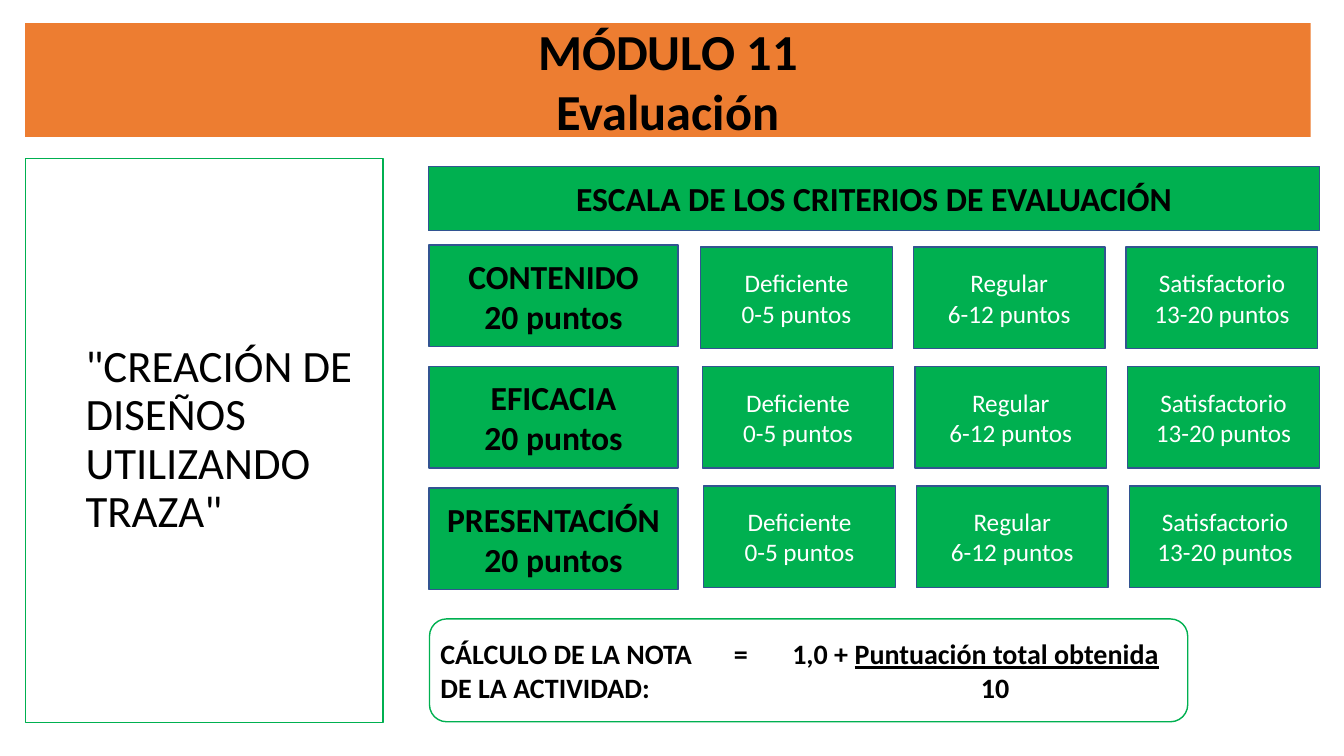
from dataclasses import dataclass

from pptx import Presentation
from pptx.dml.color import RGBColor
from pptx.enum.shapes import MSO_SHAPE
from pptx.enum.text import MSO_ANCHOR, PP_ALIGN
from pptx.util import Inches, Pt

RECTANGLE = MSO_SHAPE.RECTANGLE
ROUNDED = MSO_SHAPE.ROUNDED_RECTANGLE
CENTER, LEFT = PP_ALIGN.CENTER, PP_ALIGN.LEFT
MIDDLE = MSO_ANCHOR.MIDDLE


@dataclass(frozen=True)
class Theme:
    font: str = "Calibri"
    orange: str = "ED7D31"
    green: str = "00B050"
    blue: str = "325491"
    black: str = "000000"
    white: str = "FFFFFF"
    title: int = 36
    topic: int = 32
    heading: int = 24
    formula: int = 20
    score: int = 18


THEME = Theme()
CRITERIA = ["CONTENIDO", "EFICACIA", "PRESENTACIÓN"]
LEVELS = ["Deficiente\n0-5 puntos", "Regular\n6-12 puntos", "Satisfactorio\n13-20 puntos"]


def write(shape, text, size, color=THEME.black, bold=False, align=LEFT):
    frame = shape.text_frame
    frame.word_wrap = True
    frame.text = text
    for paragraph in frame.paragraphs:
        paragraph.alignment = align
        for run in paragraph.runs:
            font = run.font
            font.name, font.size, font.bold = THEME.font, Pt(size), bold
            font.color.rgb = RGBColor.from_string(color)
    return frame


def indent(paragraph, length):
    paragraph._p.get_or_add_pPr().set("marL", str(length))


def add_box(slide, left, top, width, height, fill=None, line=None, kind=RECTANGLE):
    shape = slide.shapes.add_shape(
        kind, Inches(left), Inches(top), Inches(width), Inches(height))
    shape.shadow.inherit = False
    shape.text_frame.vertical_anchor = MIDDLE
    if fill:
        shape.fill.solid()
        shape.fill.fore_color.rgb = RGBColor.from_string(fill)
    else:
        shape.fill.background()
    if line:
        shape.line.color.rgb = RGBColor.from_string(line)
        shape.line.width = Pt(1)
    else:
        shape.line.fill.background()
    return shape


def add_green_box(slide, left, top, width, height, text, size, color, bold):
    shape = add_box(slide, left, top, width, height, THEME.green, THEME.blue)
    write(shape, text, size, color, bold, CENTER)


def add_formula_text(slide, left, width, text):
    box = slide.shapes.add_textbox(
        Inches(left), Inches(6.27), Inches(width), Inches(0.77))
    return write(box, text, THEME.formula, bold=True)


def add_title(slide):
    banner = add_box(slide, 0.25, 0.23, 12.75, 1.13, THEME.orange)
    write(banner, "MÓDULO 11\nEvaluación", THEME.title, bold=True, align=CENTER)


def add_topic(slide):
    panel = add_box(slide, 0.25, 1.57, 3.55, 5.6, line=THEME.green)
    frame = write(panel, '"CREACIÓN DE\nDISEÑOS\nUTILIZANDO\nTRAZA"', THEME.topic)
    for paragraph in frame.paragraphs:
        paragraph.line_spacing = 0.9
        indent(paragraph, Inches(0.5))


def add_scale(slide):
    add_green_box(slide, 4.25, 1.65, 8.84, 0.64,
                  "ESCALA DE LOS CRITERIOS DE EVALUACIÓN",
                  THEME.heading, THEME.black, True)
    for row, criterion in enumerate(CRITERIA):
        add_green_box(slide, 4.255, 2.43 + 1.205 * row, 2.47, 1.01,
                      f"{criterion}\n20 puntos", THEME.heading, THEME.black, True)
        # Each row of scores starts slightly further right
        for column, level in enumerate(LEVELS):
            add_green_box(slide, 6.95 + 2.11 * column + 0.015 * row,
                          2.45 + 1.185 * row, 1.9, 1.01,
                          level, THEME.score, THEME.white, False)


def add_grade_formula(slide):
    add_box(slide, 4.26, 6.14, 7.52, 1.02, line=THEME.green, kind=ROUNDED)
    add_formula_text(slide, 4.27, 3, "CÁLCULO DE LA NOTA DE LA ACTIVIDAD:")
    add_formula_text(slide, 7.18, 0.5, "=")
    # Fraction: underlined numerator above the divisor
    fraction = add_formula_text(slide, 7.76, 4.4, "1,0 + \n10")
    numerator, divisor = fraction.paragraphs
    run = numerator.add_run()
    run.text = "Puntuación total obtenida"
    run.font.name, run.font.size = THEME.font, Pt(THEME.formula)
    run.font.bold = run.font.underline = True
    run.font.color.rgb = RGBColor.from_string(THEME.black)
    indent(divisor, Inches(1.87))


def main():
    presentation = Presentation()
    presentation.slide_width = Inches(13.33)
    presentation.slide_height = Inches(7.5)
    slide = presentation.slides.add_slide(presentation.slide_layouts[6])
    add_title(slide)
    add_topic(slide)
    add_scale(slide)
    add_grade_formula(slide)
    presentation.save("out.pptx")


if __name__ == "__main__":
    main()
